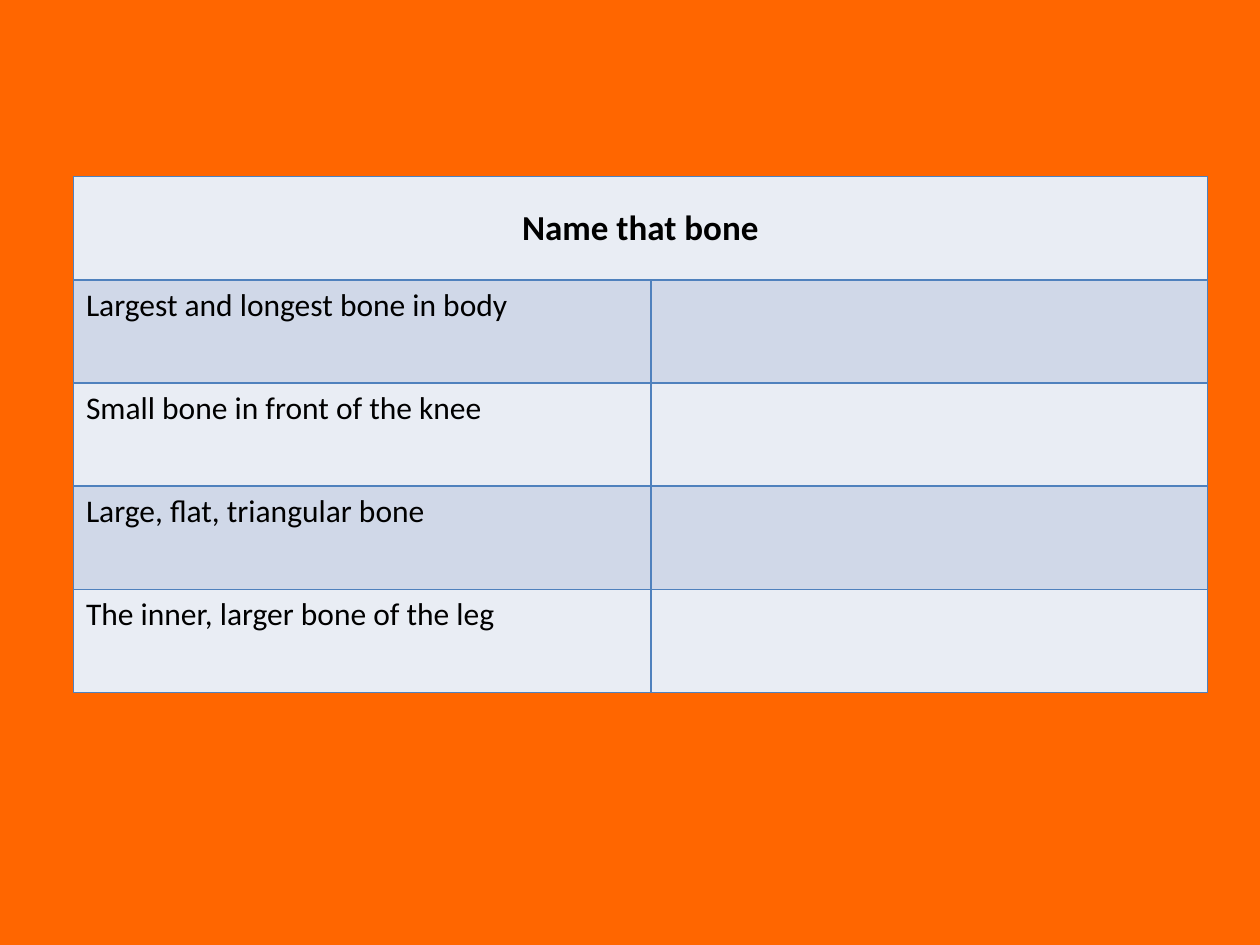
from dataclasses import dataclass

from lxml import etree
from pptx import Presentation
from pptx.dml.color import RGBColor
from pptx.enum.text import MSO_ANCHOR, PP_ALIGN
from pptx.oxml.ns import qn
from pptx.util import Cm, Pt

CENTER = PP_ALIGN.CENTER
LEFT = PP_ALIGN.LEFT
MIDDLE = MSO_ANCHOR.MIDDLE
TOP = MSO_ANCHOR.TOP
BLANK_LAYOUT = 6


@dataclass(frozen=True)
class Theme:
    font: str = "Calibri"
    background: str = "FF6600"
    text: str = "000000"
    border: str = "4F81BD"
    bands: tuple = ("E9EDF4", "D0D8E8")
    heading_size: int = 20
    body_size: int = 18
    border_width: int = 1


class SlideBuilder:
    def __init__(self, slide, theme):
        self.slide = slide
        self.theme = theme

    def background(self):
        fill = self.slide.background.fill
        fill.solid()
        fill.fore_color.rgb = RGBColor.from_string(self.theme.background)

    def borders(self, cell):
        properties = cell._tc.get_or_add_tcPr()
        # Border lines must come before the fill
        for index, side in enumerate(("lnL", "lnR", "lnT", "lnB")):
            line = etree.Element(qn(f"a:{side}"), w=str(Pt(self.theme.border_width)))
            fill = etree.SubElement(line, qn("a:solidFill"))
            etree.SubElement(fill, qn("a:srgbClr"), val=self.theme.border)
            properties.insert(index, line)

    def cell(self, cell, text, band, heading):
        theme = self.theme
        cell.fill.solid()
        cell.fill.fore_color.rgb = RGBColor.from_string(band)
        cell.vertical_anchor = MIDDLE if heading else TOP
        self.borders(cell)
        cell.text = text
        paragraph = cell.text_frame.paragraphs[0]
        paragraph.alignment = CENTER if heading else LEFT
        font = paragraph.font
        font.name = theme.font
        font.size = Pt(theme.heading_size if heading else theme.body_size)
        font.bold = heading
        font.color.rgb = RGBColor.from_string(theme.text)

    def table(self, left, top, column_widths, row_height, rows):
        shape = self.slide.shapes.add_table(
            len(rows), len(column_widths), Cm(left), Cm(top),
            Cm(sum(column_widths)), Cm(row_height * len(rows)))
        table = shape.table
        for column, width in zip(table.columns, column_widths):
            column.width = Cm(width)
        for row_index, texts in enumerate(rows):
            table.rows[row_index].height = Cm(row_height)
            band = self.theme.bands[row_index % 2]
            for column_index, text in enumerate(texts):
                self.cell(table.cell(row_index, column_index), text, band, row_index == 0)
        # The heading spans the full width
        table.cell(0, 0).merge(table.cell(0, len(column_widths) - 1))


def main():
    presentation = Presentation()
    presentation.slide_width = Cm(25.4)
    presentation.slide_height = Cm(19.05)
    slide = presentation.slides.add_slide(presentation.slide_layouts[BLANK_LAYOUT])
    builder = SlideBuilder(slide, Theme())
    builder.background()

    # Quiz table: clue on the left, room for the answer on the right
    clues = [
        "Largest and longest bone in body",
        "Small bone in front of the knee",
        "Large, flat, triangular bone",
        "The inner, larger bone of the leg",
    ]
    rows = [("Name that bone", "")] + [(clue, "") for clue in clues]
    builder.table(1.48, 3.56, (11.64, 11.22), 2.08, rows)

    presentation.save("out.pptx")


if __name__ == "__main__":
    main()
